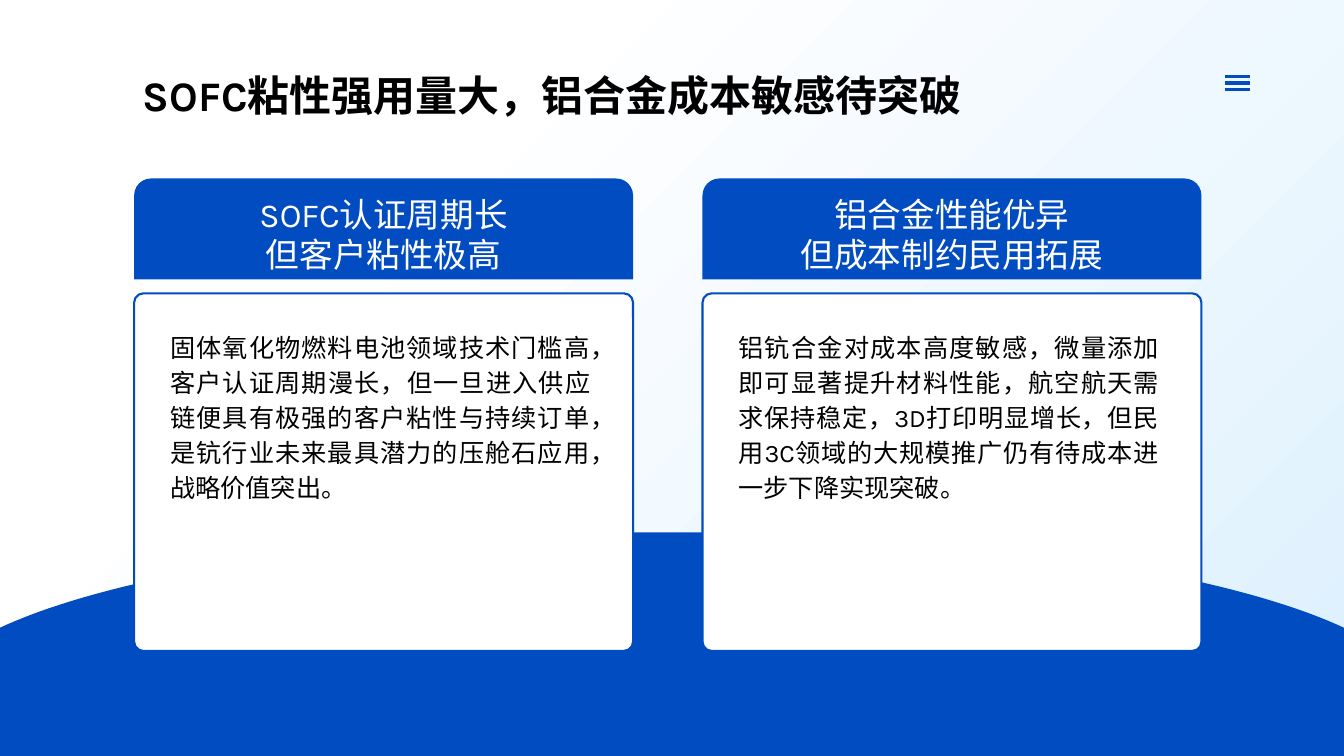
import pptx
import pptx.util
import pptx.dml.color
import pptx.enum.shapes
import pptx.enum.text
import pptx.oxml.ns
import lxml.etree

Pt = pptx.util.Pt
RGB = pptx.dml.color.RGBColor
Kind = pptx.enum.shapes.MSO_SHAPE
Align = pptx.enum.text.PP_ALIGN
Anchor = pptx.enum.text.MSO_ANCHOR

BLUE = RGB(0x00, 0x4C, 0xC0)
PALE = RGB(0xDD, 0xF0, 0xFE)
WHITE = RGB(0xFF, 0xFF, 0xFF)
BLACK = RGB(0x00, 0x00, 0x00)


class Pen:
    """Holds the style and the current slide."""
    font = "Karla"

    def __init__(self, slide):
        self.slide = slide
        self.shapes = slide.shapes

    def wash(self, start, end):
        fill = self.slide.background.fill
        fill.gradient()
        fill.gradient_angle = 315
        for stop, color, place in zip(fill.gradient_stops, (start, end), (0.28, 1)):
            stop.color.rgb = color
            stop.position = place

    def paint(self, shape, fill, edge=None):
        shape.shadow.inherit = False
        shape.fill.solid()
        shape.fill.fore_color.rgb = fill
        if edge is None:
            shape.line.fill.background()
        else:
            shape.line.color.rgb = edge
            shape.line.width = Pt(1.5)

    def box(self, kind, area, rounds, fill, edge=None):
        shape = self.shapes.add_shape(kind, *map(Pt, area))
        for i, value in enumerate(rounds):
            shape.adjustments[i] = value
        self.paint(shape, fill, edge)

    def hill(self, knots, floor, fill, steps=40):
        """Fills the area between a cubic curve and the floor."""
        dots = []
        for i in range(steps + 1):
            t = i / steps
            parts = ((1 - t) ** 3, 3 * t * (1 - t) ** 2, 3 * t * t * (1 - t), t ** 3)
            for half in range(len(knots) // 3):
                four = knots[half * 3:half * 3 + 4]
                x, y = (sum(w * k[axis] for w, k in zip(parts, four)) for axis in (0, 1))
                dots.append((Pt(x), Pt(y)))
        dots.sort()
        form = self.shapes.build_freeform(*dots[0])
        ends = [(dots[-1][0], Pt(floor)), (dots[0][0], Pt(floor))]
        form.add_line_segments(dots[1:] + ends, close=True)
        self.paint(form.convert_to_shape(), fill)

    def line(self, x1, x2, y, color, width):
        line = self.shapes.add_connector(
            pptx.enum.shapes.MSO_CONNECTOR.STRAIGHT, Pt(x1), Pt(y), Pt(x2), Pt(y))
        line.line.color.rgb = color
        line.line.width = Pt(width)
        lxml.etree.SubElement(line._element.spPr, pptx.oxml.ns.qn("a:effectLst"))

    def text(self, area, lines, size, color, bold=False, align=Align.LEFT,
             anchor=Anchor.TOP, pitch=None):
        frame = self.shapes.add_textbox(*map(Pt, area)).text_frame
        frame.word_wrap = True
        frame.vertical_anchor = anchor
        for i, words in enumerate(lines):
            para = frame.add_paragraph() if i else frame.paragraphs[0]
            para.alignment = align
            if pitch:
                para.line_spacing = Pt(pitch)
            run = para.add_run()
            run.text = words
            run.font.name = self.font
            run.font.size = Pt(size)
            run.font.bold = bold
            run.font.color.rgb = color


CARDS = [
    (("SOFC认证周期长", "但客户粘性极高"),
     "固体氧化物燃料电池领域技术门槛高，客户认证周期漫长，但一旦进入供应链便具有极强的"
     "客户粘性与持续订单，是钪行业未来最具潜力的压舱石应用，战略价值突出。"),
    (("铝合金性能优异", "但成本制约民用拓展"),
     "铝钪合金对成本高度敏感，微量添加即可显著提升材料性能，航空航天需求保持稳定，"
     "3D打印明显增长，但民用3C领域的大规模推广仍有待成本进一步下降实现突破。"),
]


def main():
    deck = pptx.Presentation()
    deck.slide_width, deck.slide_height = Pt(960), Pt(540)
    pen = Pen(deck.slides.add_slide(deck.slide_layouts[6]))

    # Background and hill
    pen.wash(WHITE, PALE)
    left = [(-2, 449.3), (84.3, 408.3), (267.8, 380.2)]
    right = [(960 - x, y) for x, y in reversed(left)]
    pen.hill(left + [(480, 380.2)] + right, 540.5, BLUE)

    # Title and menu mark
    pen.text((95, 46, 799, 43), ["SOFC粘性强用量大，铝合金成本敏感待突破"],
             30, BLACK, bold=True)
    for i in range(3):
        pen.line(874.8, 892.8, 54.7 + i * 4.7, BLUE, 2.5)

    # Cards
    for i, (head, body) in enumerate(CARDS):
        x = 95.8 + i * 406
        pen.box(Kind.ROUNDED_RECTANGLE, (x, 209.5, 356.4, 255.5), [0.026], WHITE, BLUE)
        pen.box(Kind.ROUND_2_SAME_RECTANGLE, (x, 127.5, 356.4, 72), [0.167, 0], BLUE)
        pen.text((x + 17.3, 134.6, 321.8, 65.5), head, 24, WHITE,
                 align=Align.CENTER, anchor=Anchor.MIDDLE)
        pen.text((x + 18.7, 230.4, 314.6, 160), [body], 18, BLACK,
                 align=Align.JUSTIFY, pitch=25)

    deck.save("out.pptx")


if __name__ == "__main__":
    main()
